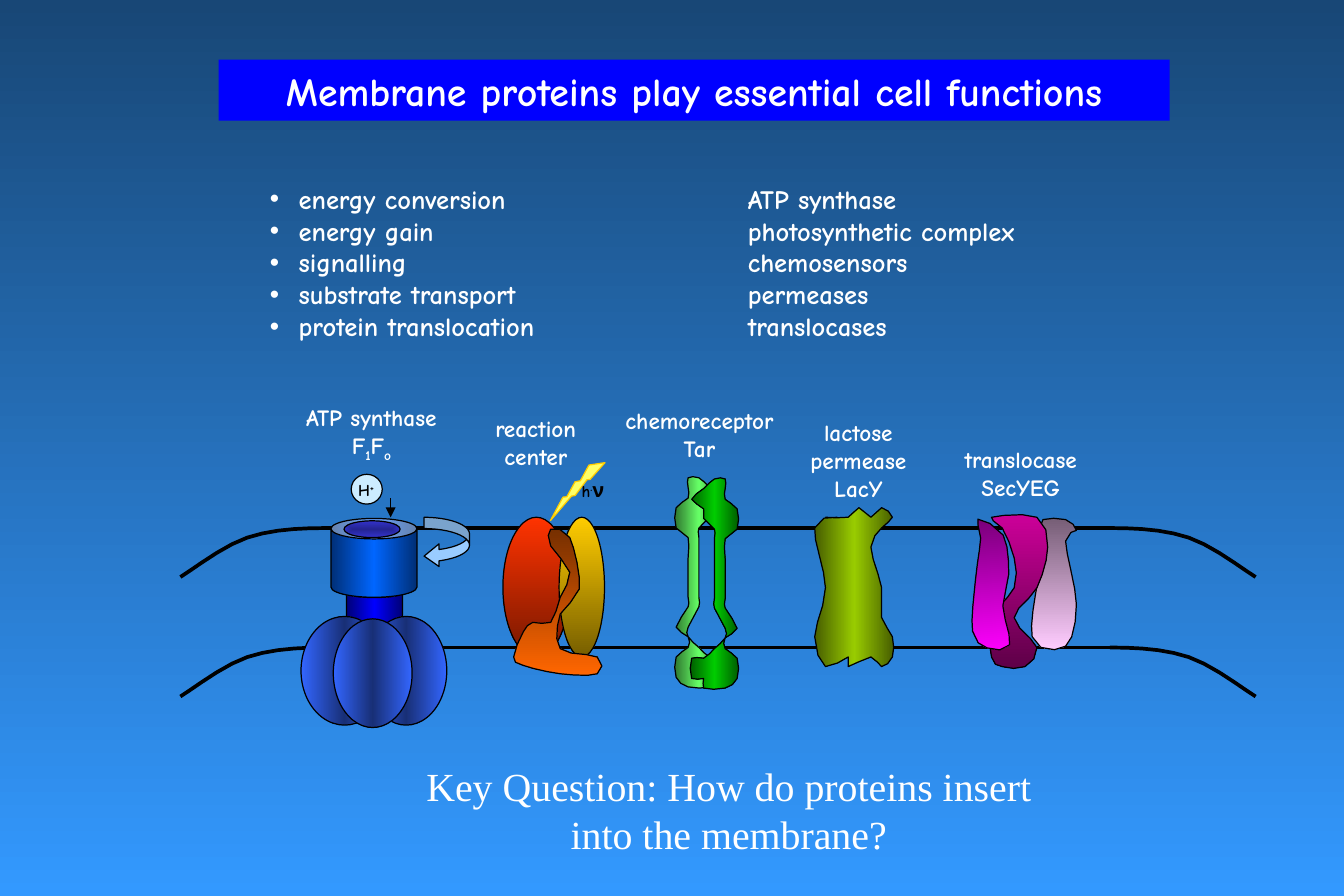
import copy
import dataclasses
import math

import lxml.etree
import pptx
import pptx.dml.color
import pptx.enum.shapes
import pptx.enum.text
import pptx.oxml.ns
import pptx.util

Inches = pptx.util.Inches
PRESET = pptx.enum.shapes.MSO_SHAPE
ALIGN = pptx.enum.text.PP_ALIGN
ANCHOR = pptx.enum.text.MSO_ANCHOR
qn = pptx.oxml.ns.qn


@dataclasses.dataclass(frozen=True)
class Theme:
    script: str = "Comic Neue"
    serif: str = "Times New Roman"
    title: int = 24
    body: int = 16
    label: int = 14
    nu: int = 12
    small: int = 10
    outline: float = 0.75
    bilayer: float = 2.25
    white: str = "FFFFFF"
    black: str = "000000"
    banner: str = "0000FF"
    bolt: str = "FFFF66"
    bolt_edge: str = "FFCC00"
    proton: str = "CCECFF"
    turn: str = "99CCFF"
    backdrop: tuple = (90, "184776", "3399FF")
    neck: tuple = (0, "000076", "0000FF", "000076")
    rotor: tuple = (0, "002F76", "0066FF", "002F76")
    head: tuple = (0, "3366FF", "182F76", "3366FF")
    pore: tuple = (None, "242492", "3333CC")
    red: tuple = (90, "FF3300", "761800")
    gold: tuple = (90, "FFCC00", "765E00")
    orange: tuple = (90, "762F00", "FF6600")
    light_green: tuple = (0, "2F762F", "66FF66", "2F762F")
    green: tuple = (0, "005E00", "00CC00", "005E00")
    olive: tuple = (0, "475E00", "99CC00", "475E00")
    rose: tuple = (90, "765E76", "FFCCFF")
    magenta: tuple = (90, "CC0099", "5E0047")
    violet: tuple = (90, "760076", "FF00FF")


THEME = Theme()


def rgb(code):
    return pptx.dml.color.RGBColor.from_string(code)


def apply(target, values):
    for name, value in values.items():
        setattr(target, name, value)


def paint(owner, fill, colour):
    if isinstance(colour, str):
        fill.solid()
        fill.fore_color.rgb = rgb(colour)
        return
    angle, *stops = colour
    fill.gradient()
    stop_list = owner.element.xpath(".//a:gsLst")[0]
    for _ in stops[2:]:
        stop_list.append(copy.deepcopy(stop_list[0]))
    for order, stop in enumerate(fill.gradient_stops):
        stop.color.rgb = rgb(stops[order])
        stop.position = order / (len(stops) - 1)
    if angle is None:
        linear = stop_list.getnext()
        radial = lxml.etree.Element(qn("a:path"), {"path": "shape"})
        centre = dict.fromkeys("ltrb", "50000")
        lxml.etree.SubElement(radial, qn("a:fillToRect"), centre)
        linear.getparent().replace(linear, radial)
    else:
        fill.gradient_angle = -angle % 360


def stroke(part, colour=THEME.black, width=THEME.outline):
    part.line.color.rgb = rgb(colour)
    part.line.width = pptx.util.Pt(width)


def preset(slide, box, kind, place, colour, edge=THEME.black, adjust=(), rotation=0):
    x, y, w, h = place
    part = slide.shapes.add_shape(kind, Inches(box[0] + x), Inches(box[1] + y), Inches(w), Inches(h))
    part.shadow.inherit = False
    part.rotation = rotation
    for order, value in enumerate(adjust):
        part.adjustments[order] = value
    paint(part, part.fill, colour)
    stroke(part, edge)


def smooth(anchors, closed):
    if closed:
        knots = [anchors[-1], *anchors, *anchors[:2]]
    else:
        (x0, _), (x1, y1) = anchors[:2]
        knots = [(2 * x0 - x1, y1), *anchors, anchors[-1]]
    for before, start, end, after in zip(knots, knots[1:], knots[2:], knots[3:]):
        steps = max(2, math.ceil(math.dist(start, end) / 0.14))
        for step in range(1, steps + 1):
            t = step / steps
            yield tuple(
                (1 - t) ** 3 * b + 3 * t * (1 - t) ** 2 * (b + (c - a) / 6)
                + 3 * t * t * (1 - t) * (c - (d - b) / 6) + t ** 3 * c
                for a, b, c, d in zip(before, start, end, after))


def curve(slide, box, anchors, colour=None, closed=True, width=THEME.outline, rotation=0):
    def place(point):
        return Inches(box[0] + point[0]), Inches(box[1] + point[1])

    outline = slide.shapes.build_freeform(*place(anchors[0]))
    outline.add_line_segments([place(point) for point in smooth(anchors, closed)], close=closed)
    part = outline.convert_to_shape()
    part.shadow.inherit = False
    part.rotation = rotation
    if colour:
        paint(part, part.fill, colour)
    else:
        part.fill.background()
    stroke(part, width=width)


def straight(slide, box, start, end, width=THEME.outline, arrow=False):
    ends = [Inches(box[i % 2] + v) for i, v in enumerate((*start, *end))]
    part = slide.shapes.add_connector(pptx.enum.shapes.MSO_CONNECTOR.STRAIGHT, *ends)
    stroke(part, width=width)
    if arrow:
        outline = part.element.xpath(".//a:ln")[0]
        lxml.etree.SubElement(outline, qn("a:tailEnd"), {"type": "triangle"})
    lxml.etree.SubElement(part.element.spPr, qn("a:effectLst"))


def write(frame, lines, size, colour=THEME.white, face=THEME.script, bold=True, align=ALIGN.CENTER, wrap=False):
    apply(frame, {"word_wrap": wrap, "auto_size": pptx.enum.text.MSO_AUTO_SIZE.NONE})
    for order, line in enumerate(lines):
        paragraph = frame.paragraphs[0] if order == 0 else frame.add_paragraph()
        apply(paragraph, {"alignment": align, "space_before": pptx.util.Pt(0)})
        for piece in [(line, size, 0)] if isinstance(line, str) else line:
            run = paragraph.add_run()
            run.text, points, baseline = piece
            apply(run.font, {"name": face, "size": pptx.util.Pt(points), "bold": bold})
            run.font.color.rgb = rgb(colour)
            if baseline:
                run._r.get_or_add_rPr().set("baseline", str(baseline * 1000))


def label(slide, box, place, lines, size=THEME.label, **style):
    x, y, w, h = place
    note = slide.shapes.add_textbox(Inches(box[0] + x), Inches(box[1] + y), Inches(w), Inches(h))
    write(note.text_frame, lines, size, **style)


def settle(holder, box):
    apply(holder, dict(zip(("left", "top", "width", "height"), map(Inches, box))))


def heading(slide, box):
    banner = slide.shapes.title
    settle(banner, box)
    paint(banner, banner.fill, THEME.banner)
    write(banner.text_frame, ["Membrane proteins play essential cell functions"], THEME.title)
    banner.text_frame.vertical_anchor = ANCHOR.MIDDLE


def functions_list(slide, box):
    left, top, width, height = box
    roles = ["energy conversion", "energy gain", "signalling", "substrate transport", "protein translocation"]
    proteins = ["ATP synthase", "photosynthetic complex", "chemosensors", "permeases", "translocases"]
    columns = ((1, roles, 0, 4, 0.24), (2, proteins, 4, width - 4, 0))
    for index, entries, shift, span, hang in columns:
        column = slide.placeholders[index]
        settle(column, (left + shift, top, span, height))
        write(column.text_frame, entries, THEME.body, align=ALIGN.LEFT)
        column.text_frame.vertical_anchor = ANCHOR.TOP
        for margins in column.element.xpath(".//a:pPr"):
            margins.set("marL", str(Inches(hang)))
            margins.set("indent", str(-Inches(hang)))
            if hang:
                lxml.etree.SubElement(margins, qn("a:buChar"), {"char": "•"})
            else:
                lxml.etree.SubElement(margins, qn("a:buNone"))


def membrane(slide, box):
    left, top, width, gap = box
    tail = [(1.22, 0), (0.56, 0.08), (0, 0.41)]
    for leaflet in ((left, top), (left, top + gap)):
        straight(slide, leaflet, tail[0], (width - tail[0][0], 0), THEME.bilayer)
        for end in (tail, [(width - x, y) for x, y in tail]):
            curve(slide, leaflet, end, closed=False, width=THEME.bilayer)


def atp_synthase(slide, box):
    preset(slide, box, PRESET.CAN, (0.9, 1.92, 0.47, 0.33), THEME.neck, adjust=[0.25])
    preset(slide, box, PRESET.OVAL, (0.94, 0.97, 0.26, 0.25), THEME.proton)
    preset(slide, box, PRESET.CAN, (0.77, 1.34, 0.72, 0.66), THEME.rotor, adjust=[0.26])
    for lobe in ((1.06, 2.16, 0.68, 0.91), (0.52, 2.16, 0.73, 0.91), (0.79, 2.18, 0.66, 0.91)):
        preset(slide, box, PRESET.OVAL, lobe, THEME.head)
    preset(slide, box, PRESET.OVAL, (0.88, 1.36, 0.47, 0.14), THEME.pore)
    formula = [(text, THEME.label, shift) for text, shift in (("F", 0), ("1", -25), ("F", 0), ("o", -25))]
    label(slide, box, (0.36, 0.33, 1.5, 0.57), ["ATP synthase", formula])
    proton = [("H", THEME.small, 0), ("+", THEME.small, 30)]
    label(slide, box, (0.9, 0.97, 0.37, 0.27), [proton], colour=THEME.black, align=ALIGN.LEFT)
    straight(slide, box, (1.27, 1.17), (1.27, 1.33), arrow=True)
    preset(slide, box, PRESET.CURVED_LEFT_ARROW, (1.55, 1.33, 0.38, 0.42), THEME.turn, adjust=[0.25, 0.5, 0.33])


def reaction_center(slide, box):
    preset(slide, box, PRESET.LIGHTNING_BOLT, (0.73, 0.76, 0.17, 0.66), THEME.bolt, THEME.bolt_edge, rotation=52.2)
    preset(slide, box, PRESET.OVAL, (0.21, 1.33, 0.56, 1.17), THEME.red)
    preset(slide, box, PRESET.OVAL, (0.68, 1.33, 0.38, 1.17), THEME.gold)
    curve(slide, box, [
        (0.61, 1.43), (0.77, 1.5), (0.85, 1.93), (0.69, 2.14), (0.69, 2.43), (1, 2.5), (1, 2.64), (0.69, 2.64),
        (0.38, 2.57), (0.3, 2.5), (0.38, 2.29), (0.46, 2.21), (0.61, 2.21), (0.69, 2), (0.77, 1.79),
        (0.61, 1.57)], THEME.orange)
    label(slide, box, (0, 0.42, 0.97, 0.57), ["reaction", "center"])
    photon = [("h", THEME.small, 0), (".", THEME.nu, 30), ("ν", THEME.nu, 0)]
    label(slide, box, (0.77, 0.95, 0.42, 0.3), [photon], colour=THEME.black, align=ALIGN.LEFT)


def chemoreceptor(slide, box):
    monomer = [
        (0.76, 1.08), (0.76, 1.17), (0.66, 1.25), (0.66, 1.42), (0.76, 1.5), (0.76, 1.67), (0.76, 2),
        (0.76, 2.08), (0.66, 2.25), (0.76, 2.33), (0.76, 2.42), (0.66, 2.5), (0.66, 2.67), (0.76, 2.75),
        (0.94, 2.75), (0.94, 2.67), (1.04, 2.67), (1.04, 2.5), (0.94, 2.5), (0.85, 2.42), (0.76, 2.33),
        (0.76, 2.25), (0.85, 2.08), (0.85, 2), (0.85, 1.75), (0.85, 1.5), (0.85, 1.42), (0.94, 1.33),
        (0.94, 1.25), (1.04, 1.17), (0.94, 1.08), (0.85, 1), (0.76, 1)]
    curve(slide, box, monomer, THEME.light_green)
    curve(slide, box, [(1.83 - x, y + 0.01) for x, y in monomer], THEME.green)
    label(slide, box, (0.06, 0.35, 1.59, 0.57), ["chemoreceptor", "Tar"])


def lactose_permease(slide, box):
    curve(slide, box, [
        (1.01, 1.33), (0.82, 1.42), (0.91, 1.92), (0.82, 2.33), (0.91, 2.58), (1.1, 2.5), (1.1, 2.58), (1.29, 2.5),
        (1.38, 2.58), (1.47, 2.5), (1.47, 2.33), (1.38, 2.17), (1.38, 1.92), (1.29, 1.58), (1.38, 1.42),
        (1.47, 1.33), (1.38, 1.25), (1.29, 1.33), (1.19, 1.25), (1.1, 1.33), (0.91, 1.33)], THEME.olive, closed=False)
    label(slide, box, (0.64, 0.45, 1.09, 0.81), ["lactose", "permease", "LacY"])


def translocase(slide, box):
    curve(slide, box, [
        (0.73, 1.44), (0.73, 1.61), (0.64, 2.33), (0.92, 2.41), (1.01, 2.06), (0.92, 1.53), (1.01, 1.44),
        (0.92, 1.35), (0.73, 1.35)], THEME.rose)
    curve(slide, box, [
        (0.39, 1.42), (0.49, 1.67), (0.49, 1.92), (0.3, 2.17), (0.3, 2.5), (0.39, 2.58), (0.58, 2.58), (0.68, 2.42),
        (0.49, 2.17), (0.68, 1.92), (0.77, 1.58), (0.68, 1.33), (0.3, 1.33)], THEME.magenta)
    curve(slide, box, [
        (0.24, 1.5), (0.17, 1.84), (0.11, 2.27), (0.22, 2.42), (0.41, 2.41), (0.38, 2.08), (0.45, 1.82),
        (0.43, 1.49), (0.23, 1.34)], THEME.violet, rotation=355.4)
    label(slide, box, (-0.09, 0.68, 1.27, 0.57), ["translocase", "SecYEG"])


def main():
    deck = pptx.Presentation()
    apply(deck, {"slide_width": Inches(11.25), "slide_height": Inches(7.5)})
    slide = deck.slides.add_slide(deck.slide_layouts[3])
    paint(slide, slide.background.fill, THEME.backdrop)
    heading(slide, (1.83, 0.5, 7.96, 0.51))
    functions_list(slide, (2.16, 1.48, 6.77, 1.45))
    membrane(slide, (1.51, 4.42, 9, 1))
    proteins = {atp_synthase: 2, reaction_center: 4, chemoreceptor: 5, lactose_permease: 6, translocase: 8}
    for draw, left in proteins.items():
        draw(slide, (left, 3))
    question = "Key Question: How do proteins insert into the membrane?"
    label(slide, (3.29, 6.33), (0, 0, 5.62, 0.91), [question], THEME.title, face=THEME.serif, bold=False, wrap=True)
    deck.save("out.pptx")


if __name__ == "__main__":
    main()
